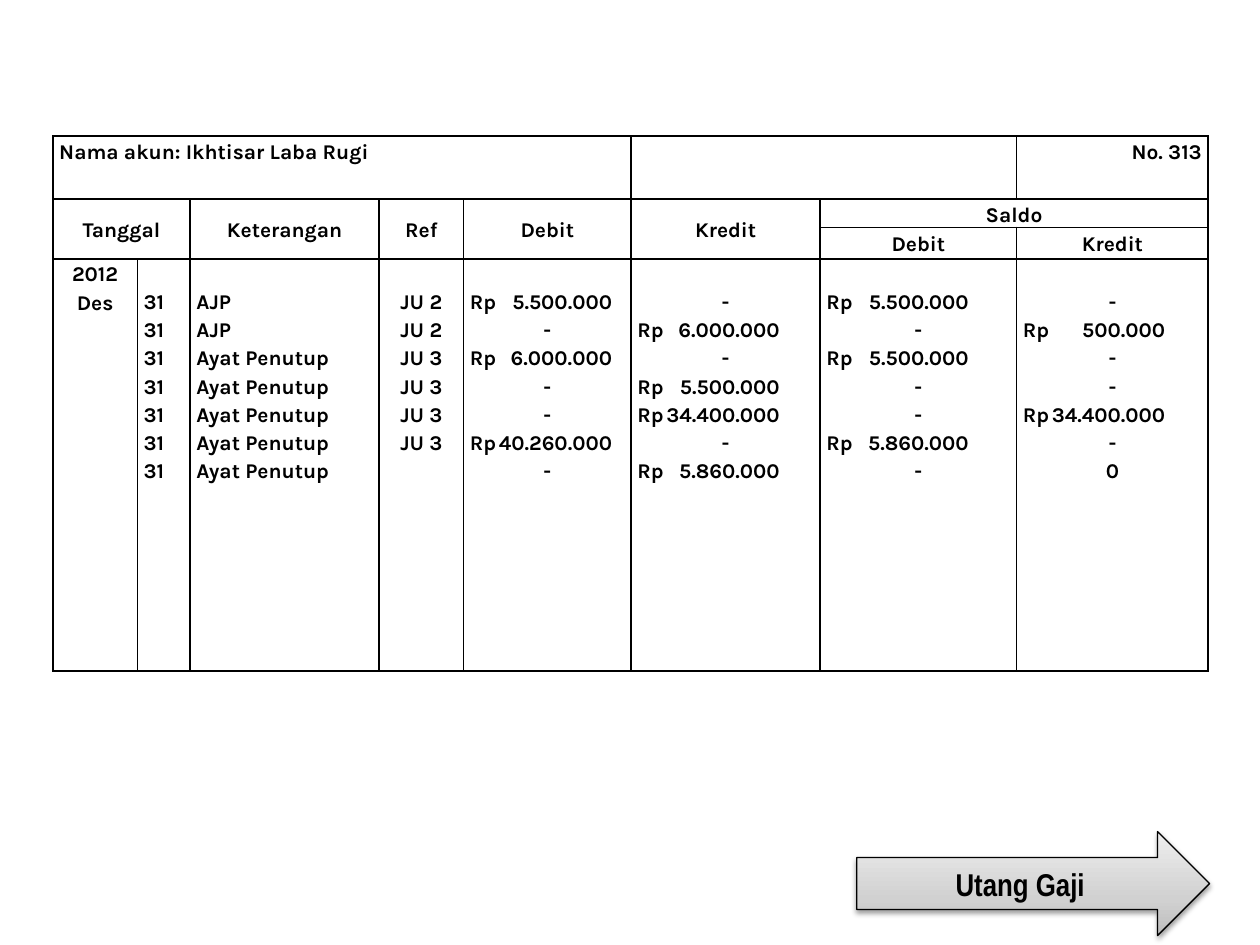
"""Build a ledger slide with an account table and an arrow to the next one."""
from pptx import Presentation
from pptx.dml.color import RGBColor
from pptx.enum.shapes import MSO_SHAPE
from pptx.enum.text import MSO_ANCHOR, PP_ALIGN
from pptx.oxml import parse_xml
from pptx.oxml.ns import nsdecls
from pptx.util import Inches, Pt

BLACK = RGBColor(0, 0, 0)
SHADES = ((0, RGBColor(0xBD, 0xBD, 0xBD)), (35, RGBColor(0xD1, 0xD1, 0xD1)),
          (100, RGBColor(0xEE, 0xEE, 0xEE)))
WIDE, HIGH = 10, 7.5
COLS = (0.67, 0.42, 1.5, 0.67, 1.33, 1.5, 1.56, 1.52)
ROWS = (0.5, 0.22, 0.25, 3.27)
LINE = 0.22
MONEY = 1.13
LEFT, MID, RIGHT, FULL = PP_ALIGN.LEFT, PP_ALIGN.CENTER, PP_ALIGN.RIGHT, PP_ALIGN.JUSTIFY
MERGES = ((0, 0, 0, 4), (0, 5, 0, 6), (1, 0, 2, 1), (1, 2, 2, 2),
          (1, 3, 2, 3), (1, 4, 2, 4), (1, 5, 2, 5), (1, 6, 1, 7))
HEADS = ((1, 0, "Tanggal"), (1, 2, "Keterangan"), (1, 3, "Ref"), (1, 4, "Debit"),
         (1, 5, "Kredit"), (1, 6, "Saldo"), (2, 6, "Debit"), (2, 7, "Kredit"))
ENTRIES = (
    ("31", "AJP", "JU 2", "5.500.000", "-", "5.500.000", "-"),
    ("31", "AJP", "JU 2", "-", "6.000.000", "-", "500.000"),
    ("31", "Ayat Penutup", "JU 3", "6.000.000", "-", "5.500.000", "-"),
    ("31", "Ayat Penutup", "JU 3", "-", "5.500.000", "-", "-"),
    ("31", "Ayat Penutup", "JU 3", "-", "34.400.000", "-", "34.400.000"),
    ("31", "Ayat Penutup", "JU 3", "40.260.000", "-", "5.860.000", "-"),
    ("31", "Ayat Penutup", "", "-", "5.860.000", "-", "0"),
)


def add_run(para, text, face, size):
    """Add one bold black run to a paragraph."""
    run = para.add_run()
    run.text = text
    font = run.font
    font.name, font.size, font.bold = face, Pt(size), True
    font.color.rgb = BLACK


def set_tab(para):
    """Give a paragraph the right tab that lines up the amounts."""
    props = para._p.get_or_add_pPr()
    props.append(parse_xml(f'<a:tabLst {nsdecls("a")}>'
                           f'<a:tab pos="{Inches(MONEY)}" algn="r"/></a:tabLst>'))


def write(cell, lines, align, anchor=MSO_ANCHOR.TOP, top=0):
    """Write lines into a cell, setting amounts after a currency sign."""
    cell.vertical_anchor = anchor
    cell.margin_top = Inches(top)
    frame = cell.text_frame
    for i, text in enumerate(lines):
        para = frame.add_paragraph() if i else frame.paragraphs[0]
        para.line_spacing = 1.15
        money = text.endswith("000")
        para.alignment = LEFT if money else align
        if money:
            set_tab(para)
            text = "Rp\t" + text
        add_run(para, text, "Karla", 12)


def frame_cell(cell):
    """Clear a cell's fill, set its margins and draw its four borders."""
    cell.fill.background()
    cell.margin_left = cell.margin_right = Inches(0.05)
    cell.margin_top = cell.margin_bottom = 0
    props = cell._tc.get_or_add_tcPr()
    for i, side in enumerate("LRTB"):
        props.insert(i, parse_xml(
            f'<a:ln{side} {nsdecls("a")} w="{Pt(1)}"><a:solidFill>'
            f'<a:srgbClr val="{BLACK}"/></a:solidFill></a:ln{side}>'))


def add_grid(slide):
    """Add the empty ledger table with its merged heading cells."""
    table = slide.shapes.add_table(
        len(ROWS), len(COLS), Inches(0.42), Inches(1.08),
        Inches(sum(COLS)), Inches(sum(ROWS))).table
    table.first_row = table.horz_banding = False
    for col, width in zip(table.columns, COLS):
        col.width = Inches(width)
    for row, height in zip(table.rows, ROWS):
        row.height = Inches(height)
    for cell in table.iter_cells():
        frame_cell(cell)
    for top, left, low, right in MERGES:
        table.cell(top, left).merge(table.cell(low, right))
    return table


def fill_grid(table):
    """Write the title, headings and entries of the ledger."""
    write(table.cell(0, 0), ["Nama akun: Ikhtisar Laba Rugi"], LEFT)
    write(table.cell(0, 7), ["No. 313"], RIGHT)
    for row, col, text in HEADS:
        write(table.cell(row, col), [text], MID, MSO_ANCHOR.MIDDLE)
    write(table.cell(3, 0), ["2012", "Des"], MID)
    for col, lines in enumerate(zip(*ENTRIES), 1):
        align = FULL if col < 3 else MID
        write(table.cell(3, col), [t for t in lines if t], align, top=LINE)


def add_arrow(slide, text, left, top, width, height):
    """Add a shaded arrow placed by shares of the slide's size."""
    arrow = slide.shapes.add_shape(
        MSO_SHAPE.RIGHT_ARROW, Inches(WIDE * left), Inches(HIGH * top),
        Inches(WIDE * width), Inches(HIGH * height))
    stops = "".join(f'<a:gs pos="{pos * 1000}"><a:srgbClr val="{shade}"/></a:gs>'
                    for pos, shade in SHADES)
    props = arrow._element.spPr
    props.insert(2, parse_xml(
        f'<a:gradFill {nsdecls("a")} rotWithShape="1"><a:gsLst>{stops}</a:gsLst>'
        '<a:lin ang="16200000" scaled="1"/></a:gradFill>'))
    arrow.line.color.rgb = BLACK
    arrow.line.width = Pt(0.75)
    arrow.shadow.inherit = False
    props[-1].append(parse_xml(
        f'<a:outerShdw {nsdecls("a")} blurRad="{Pt(3.1)}" dist="{Pt(1.6)}" '
        f'dir="5400000" rotWithShape="0"><a:srgbClr val="{BLACK}">'
        '<a:alpha val="38000"/></a:srgbClr></a:outerShdw>'))
    arrow.text_frame.vertical_anchor = MSO_ANCHOR.MIDDLE
    para = arrow.text_frame.paragraphs[0]
    para.alignment = MID
    add_run(para, text, "Arial Narrow", 18)


def main():
    """Build the slide and save it."""
    deck = Presentation()
    deck.slide_width, deck.slide_height = Inches(WIDE), Inches(HIGH)
    slide = deck.slides.add_slide(deck.slide_layouts[6])
    fill_grid(add_grid(slide))
    add_arrow(slide, "Utang Gaji", 0.68, 0.88, 0.28, 0.11)
    deck.save("out.pptx")


if __name__ == "__main__":
    main()
